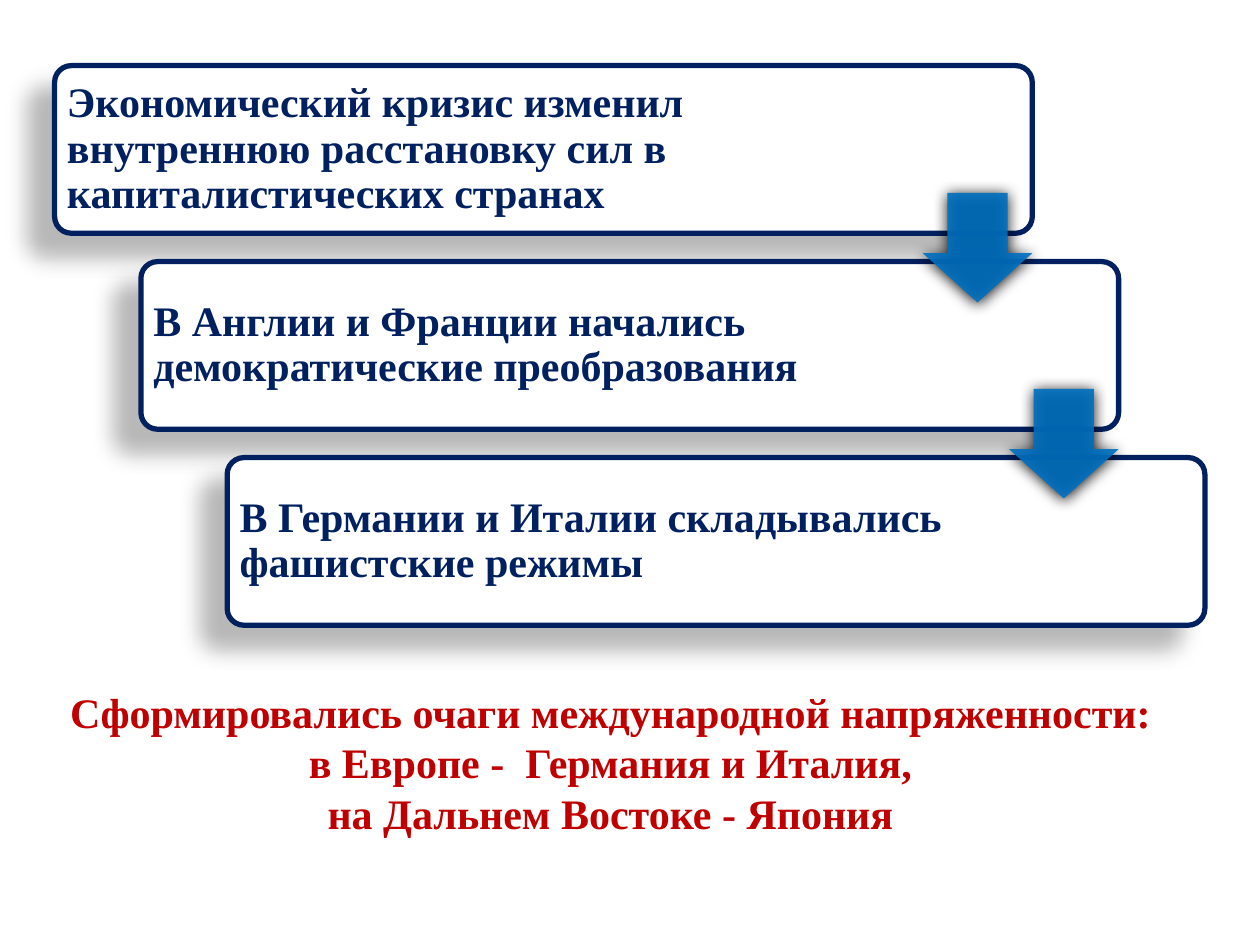
from lxml.etree import SubElement
from pptx import Presentation
from pptx.dml.color import RGBColor
from pptx.enum.shapes import MSO_SHAPE as Shape
from pptx.enum.text import MSO_ANCHOR as Anchor, MSO_AUTO_SIZE as AutoSize, PP_ALIGN as Align
from pptx.oxml.ns import qn
from pptx.util import Pt

COLORS = {"navy": "002060", "blue": "0070C0", "red": "C00000", "white": "FFFFFF", "black": "000000"}
STEPS = [
    ("Экономический кризис изменил внутреннюю расстановку сил в капиталистических странах", 460.8),
    ("В Англии и Франции начались демократические преобразования", 447.1),
    ("В Германии и Италии складывались фашистские режимы", 447.1),
]
CONCLUSION = [
    "Сформировались очаги международной напряженности:",
    "в Европе -  Германия и Италия,",
    "на Дальнем Востоке - Япония",
]
STEP_WIDTH, STEP_HEIGHT = 558.7, 95.8
SHIFT_X, SHIFT_Y = 49.32, 112
ARROW_SIZE = 62.6


def rgb(name):
    """Return the named palette colour."""
    return RGBColor.from_string(COLORS[name])


def add_shadow(shape, opacity, blur, distance, angle):
    """Give a shape an outer shadow; opacity in percent, lengths in points, angle in degrees."""
    shape.shadow.inherit = False
    effects = shape._element.spPr.find(qn("a:effectLst"))
    shadow = SubElement(effects, qn("a:outerShdw"), blurRad=str(Pt(blur)), dist=str(Pt(distance)),
                        dir=str(angle * 60000), algn="ctr", rotWithShape="0")
    color = SubElement(shadow, qn("a:srgbClr"), val=COLORS["black"])
    SubElement(color, qn("a:alpha"), val=str(opacity * 1000))


def add_bold_run(paragraph, text, color):
    """Add a bold 24-point run to a paragraph."""
    run = paragraph.add_run()
    run.text = text
    run.font.name = "Times New Roman"
    run.font.size = Pt(24)
    run.font.bold = True
    run.font.color.rgb = rgb(color)


def add_step(slide, left, top, text, text_width):
    """Draw one step of the staircase with its statement."""
    card = slide.shapes.add_shape(Shape.ROUNDED_RECTANGLE, Pt(left), Pt(top), Pt(STEP_WIDTH), Pt(STEP_HEIGHT))
    card.adjustments[0] = 0.1
    card.fill.solid()
    card.fill.fore_color.rgb = rgb("white")
    card.line.color.rgb = rgb("navy")
    card.line.width = Pt(3)
    add_shadow(card, 28, 11.8, 19.7, 141)

    statement = slide.shapes.add_textbox(Pt(left), Pt(top), Pt(text_width), Pt(STEP_HEIGHT)).text_frame
    statement.word_wrap = True
    statement.vertical_anchor = Anchor.MIDDLE
    statement.margin_top = statement.margin_bottom = Pt(7.2)
    statement.paragraphs[0].line_spacing = 0.9
    add_bold_run(statement.paragraphs[0], text, "navy")


def add_step_arrow(slide, left, top):
    """Draw the arrow that leads from one step to the next."""
    arrow = slide.shapes.add_shape(Shape.DOWN_ARROW, Pt(left), Pt(top), Pt(ARROW_SIZE), Pt(ARROW_SIZE))
    arrow.adjustments[0] = 0.55
    arrow.adjustments[1] = 0.45
    arrow.fill.solid()
    arrow.fill.fore_color.rgb = rgb("blue")
    fill_color = arrow._element.spPr.find(qn("a:solidFill")).find(qn("a:srgbClr"))
    SubElement(fill_color, qn("a:alpha"), val="90000")
    arrow.line.fill.background()
    add_shadow(arrow, 100, 8.5, 1, 90)


def add_staircase(slide, left, top):
    """Place the steps, then the arrows between them."""
    corners = [(left + i * SHIFT_X, top + i * SHIFT_Y) for i in range(len(STEPS))]
    for (x, y), (text, text_width) in zip(corners, STEPS):
        add_step(slide, x, y, text, text_width)
    for x, y in corners[:-1]:
        add_step_arrow(slide, x + STEP_WIDTH - ARROW_SIZE, y + 72.8)


def add_conclusion(slide, left, top, width, height):
    """Write the centred conclusion, one paragraph a line."""
    conclusion = slide.shapes.add_textbox(Pt(left), Pt(top), Pt(width), Pt(height)).text_frame
    conclusion.word_wrap = True
    conclusion.auto_size = AutoSize.SHAPE_TO_FIT_TEXT
    for i, line in enumerate(CONCLUSION):
        paragraph = conclusion.add_paragraph() if i else conclusion.paragraphs[0]
        paragraph.alignment = Align.CENTER
        add_bold_run(paragraph, line, "red")


def main():
    """Build and save the slide."""
    deck = Presentation()
    deck.slide_width, deck.slide_height = Pt(720), Pt(540)
    slide = deck.slides.add_slide(deck.slide_layouts[6])
    add_staircase(slide, 31.2, 37.5)
    add_conclusion(slide, 14.4, 388.8, 668.9, 94.5)
    deck.save("out.pptx")


if __name__ == "__main__":
    main()
